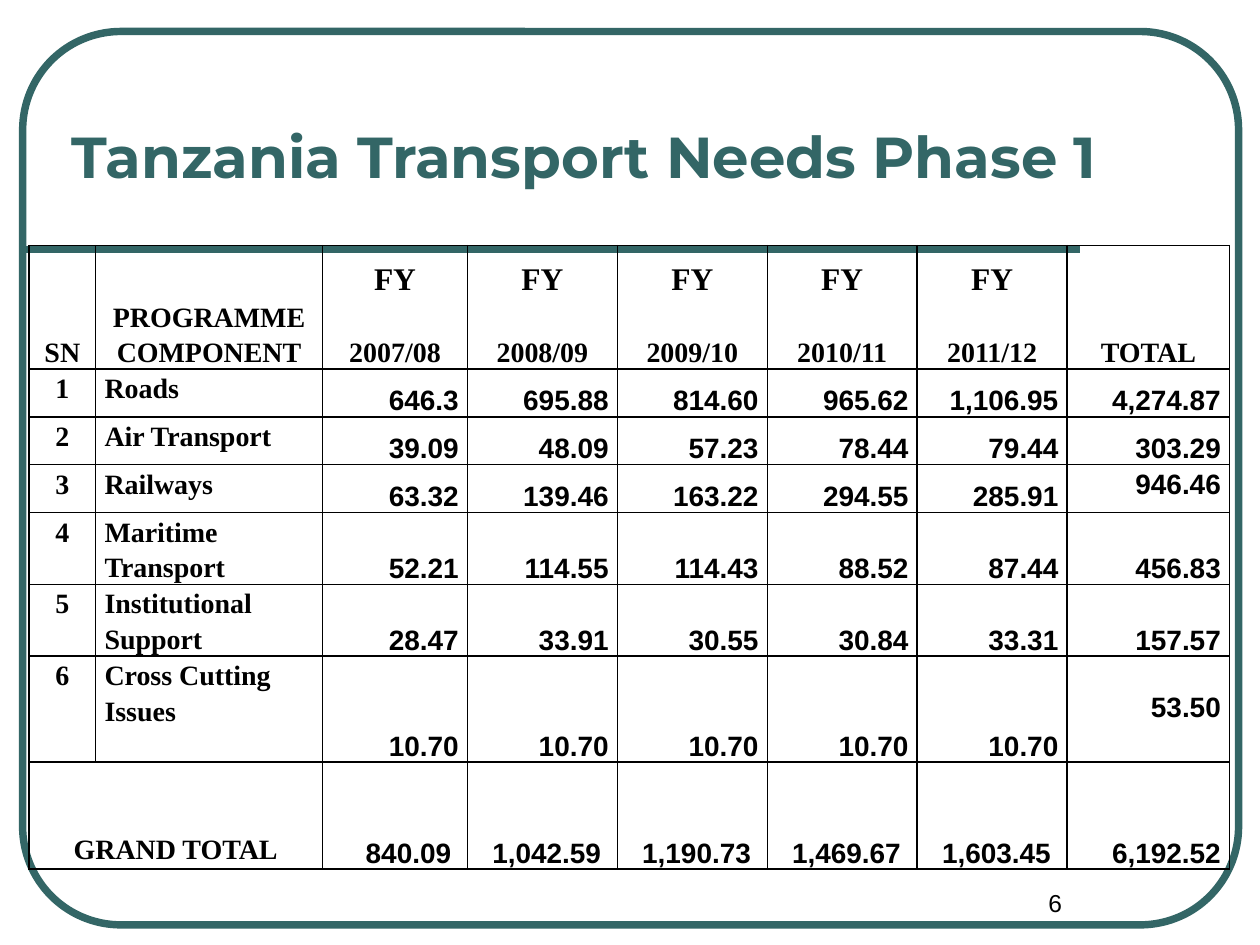
import pptx
import pptx.util
import pptx.dml.color
import pptx.enum.shapes
import pptx.enum.text
import pptx.oxml
import pptx.oxml.ns
from lxml import etree

Inches, Pt = pptx.util.Inches, pptx.util.Pt
ALIGN, ANCHOR = pptx.enum.text.PP_ALIGN, pptx.enum.text.MSO_ANCHOR
TEAL, BLACK = "336666", "000000"
SERIF, SANS = "Times New Roman", "Arial"

COLUMNS = [0.53, 1.8, 1.15] + [1.19] * 4 + [1.29]
ROWS = [0.41, 0.56] + [0.38] * 3 + [0.57] * 2 + [0.84, 0.85]
YEARS = ["2007/08", "2008/09", "2009/10", "2010/11", "2011/12"]
CONTENT = [
    ["SN", "PROGRAMME COMPONENT"] + ["FY"] * len(YEARS) + ["TOTAL"],
    ["", ""] + YEARS + [""],
    ["1", "Roads", "646.3", "695.88", "814.60", "965.62", "1,106.95", "4,274.87"],
    ["2", "Air Transport", "39.09", "48.09", "57.23", "78.44", "79.44", "303.29"],
    ["3", "Railways", "63.32", "139.46", "163.22", "294.55", "285.91", "946.46"],
    ["4", "Maritime Transport", "52.21", "114.55", "114.43", "88.52", "87.44", "456.83"],
    ["5", "Institutional Support", "28.47", "33.91", "30.55", "30.84", "33.31", "157.57"],
    ["6", "Cross Cutting Issues"] + ["10.70"] * len(YEARS) + ["53.50"],
    ["GRAND TOTAL", "", "840.09", "1,042.59", "1,190.73", "1,469.67", "1,603.45", "6,192.52"],
]
LAST_ROW, LAST_COLUMN = len(ROWS) - 1, len(COLUMNS) - 1
RAILWAYS_ROW, ISSUES_ROW = 4, 7


def color(value):
    return pptx.dml.color.RGBColor.from_string(value)


def set_font(font, name, size, value, bold=False):
    font.name, font.size, font.bold = name, Pt(size), bold
    font.color.rgb = color(value)


def add_frame(page, left, top, width, height):
    """Rounded outline with the rule that runs below the title."""
    outline = page.shapes.add_shape(
        pptx.enum.shapes.MSO_SHAPE.ROUNDED_RECTANGLE,
        Inches(left), Inches(top), Inches(width), Inches(height))
    outline.adjustments[0] = 0.11
    outline.shadow.inherit = False
    outline.fill.background()
    outline.line.color.rgb = color(TEAL)
    outline.line.width = Pt(4.25)

    rule_y = Inches(top + 1.73)
    rule = page.shapes.add_connector(
        pptx.enum.shapes.MSO_CONNECTOR.STRAIGHT,
        Inches(left - 0.02), rule_y, Inches(left + 8.39), rule_y)
    rule.line.color.rgb = color(TEAL)
    rule.line.width = Pt(4.5)
    etree.SubElement(rule.element.spPr, pptx.oxml.ns.qn("a:effectLst"))


def place_title(page, left, top, width, height):
    title = page.shapes.title
    title.left, title.top = Inches(left), Inches(top)
    title.width, title.height = Inches(width), Inches(height)
    frame = title.text_frame
    frame.text = "Tanzania Transport Needs Phase 1"
    frame.word_wrap = True
    frame.vertical_anchor = ANCHOR.BOTTOM
    para = frame.paragraphs[0]
    para.alignment = ALIGN.LEFT
    set_font(para.font, "Montserrat", 33, TEAL, True)


def set_borders(cell, hidden):
    """Black rules on all sides except the hidden ones."""
    properties = cell._tc.get_or_add_tcPr()
    for side in "LRTB":
        paint = "<a:noFill/>" if side in hidden else (
            f'<a:solidFill><a:srgbClr val="{BLACK}"/></a:solidFill>')
        properties.append(pptx.oxml.parse_xml(
            f'<a:ln{side} {pptx.oxml.ns.nsdecls("a")} w="{Pt(1)}">{paint}</a:ln{side}>'))


def hidden_sides(row, column):
    if row < 2:
        return "B" if row == 0 else "T"
    if row == LAST_ROW and column < 2:
        return "R" if column == 0 else "L"
    return ""


def format_cell(cell, row, column):
    is_header, is_label = row < 2, column < 2
    set_borders(cell, hidden_sides(row, column))
    cell.fill.background()
    cell.margin_left = cell.margin_right = Inches(0.07)
    cell.margin_top = cell.margin_bottom = 0
    cell.vertical_anchor = ANCHOR.BOTTOM

    # Labels and two totals sit at the top of their rows
    in_body = 2 <= row < LAST_ROW
    if in_body and (is_label or (column == LAST_COLUMN and row in (RAILWAYS_ROW, ISSUES_ROW))):
        cell.vertical_anchor = ANCHOR.TOP
    if row == ISSUES_ROW and column == LAST_COLUMN:
        cell.margin_top = Inches(0.25)
    if row == LAST_ROW:
        if is_label:
            cell.margin_bottom = Inches(0.03)
        elif column < LAST_COLUMN:
            cell.margin_right = Inches(0.13)

    para = cell.text_frame.paragraphs[0]
    para.line_spacing = 1.15
    if is_header or column == 0:
        para.alignment = ALIGN.CENTER
    else:
        para.alignment = ALIGN.LEFT if is_label else ALIGN.RIGHT
    size = 18 if cell.text == "FY" else 16
    set_font(para.font, SERIF if is_header or is_label else SANS, size, BLACK, True)


def add_needs_table(page, left, top):
    table = page.shapes.add_table(
        len(ROWS), len(COLUMNS), Inches(left), Inches(top),
        Inches(sum(COLUMNS)), Inches(sum(ROWS))).table
    table.first_row = table.horz_banding = False
    for column, width in zip(table.columns, COLUMNS):
        column.width = Inches(width)
    for row, height in zip(table.rows, ROWS):
        row.height = Inches(height)
    for row, texts in enumerate(CONTENT):
        for column, text in enumerate(texts):
            cell = table.cell(row, column)
            cell.text = text
            format_cell(cell, row, column)

    # Headings over both header rows, and the grand total label
    for column in (0, 1, LAST_COLUMN):
        table.cell(0, column).merge(table.cell(1, column))
    table.cell(LAST_ROW, 0).merge(table.cell(LAST_ROW, 1))


def add_page_number(page, left, top, width, height):
    box = page.shapes.add_textbox(Inches(left), Inches(top), Inches(width), Inches(height))
    box.text_frame.word_wrap = True
    box.text_frame.text = "6"
    para = box.text_frame.paragraphs[0]
    para.alignment = ALIGN.CENTER
    set_font(para.font, SANS, 14, BLACK)


def main():
    deck = pptx.Presentation()
    deck.slide_width, deck.slide_height = Inches(10), Inches(7.5)
    page = deck.slides.add_slide(deck.slide_layouts.get_by_name("Title Only"))
    add_frame(page, 0.18, 0.25, 9.65, 7.09)
    place_title(page, 0.47, 0.31, 8.81, 1.25)
    add_needs_table(page, 0.23, 1.95)
    add_page_number(page, 7.5, 7, 1.75, 0.5)
    deck.save("out.pptx")


if __name__ == "__main__":
    main()
